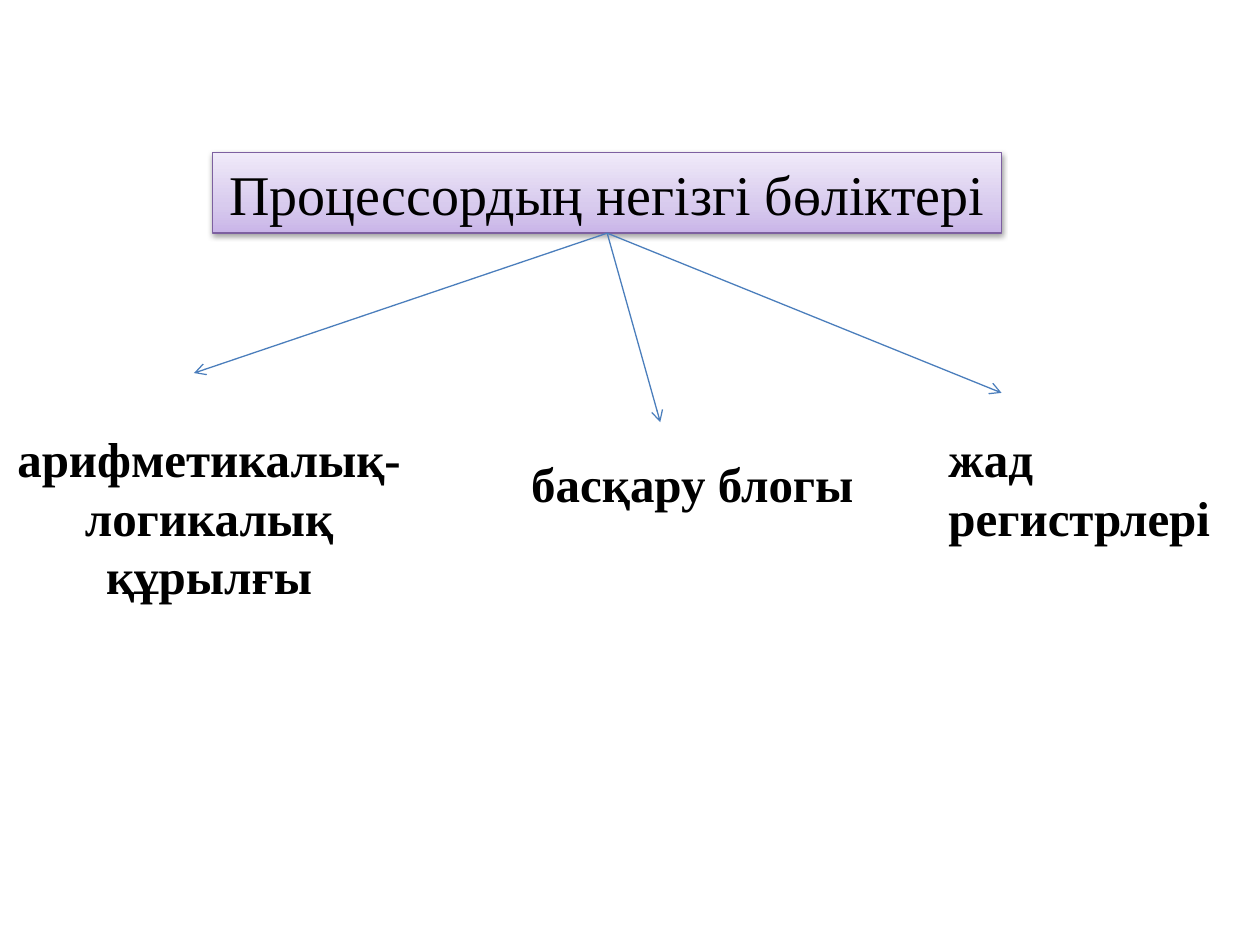
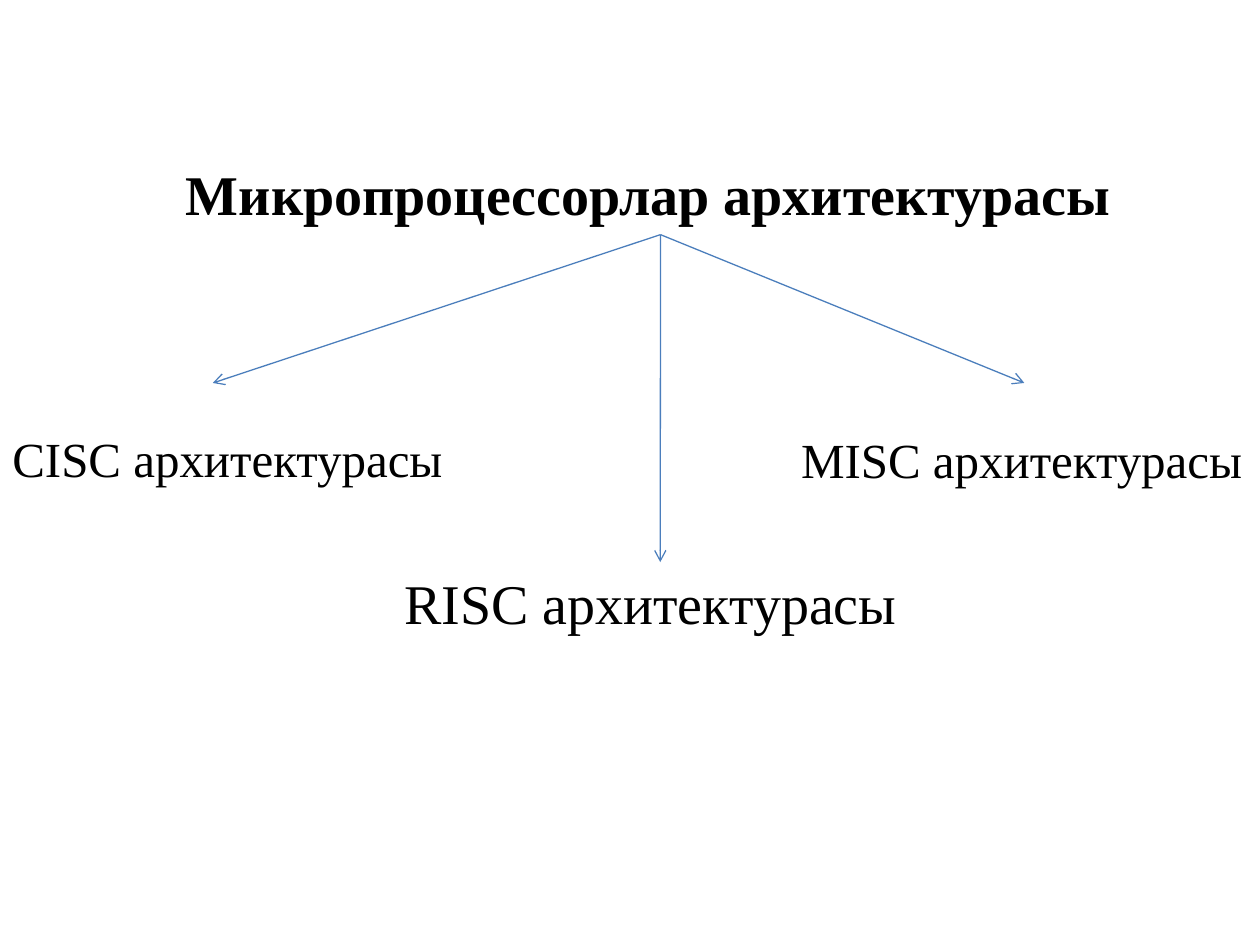
from copy import deepcopy
from dataclasses import dataclass

from lxml import etree
from pptx import Presentation, util as u
from pptx.dml.color import RGBColor
from pptx.enum import shapes, text
from pptx.oxml.ns import qn

BLACK = RGBColor(0x00, 0x00, 0x00)
ARROW_BLUE = RGBColor(0x4B, 0x7E, 0xBC)
BORDER_PURPLE = RGBColor(0x7D, 0x60, 0xA0)
PURPLE_STOPS = (
    (0, RGBColor(0xC9, 0xB5, 0xE8)),
    (0.35, RGBColor(0xD8, 0xCB, 0xEE)),
    (1, RGBColor(0xF0, 0xEA, 0xF9)),
)
FONT = "Times New Roman"
LINE_WIDTH = u.Pt(0.75)
BOTTOM = 2
LEFT, CENTER = text.PP_ALIGN.LEFT, text.PP_ALIGN.CENTER


@dataclass(frozen=True)
class Label:
    """A piece of text; the box is left, top, width, height in cm."""
    words: str
    box: tuple[float, float, float, float]
    size: int = 28
    bold: bool = False
    wrap: bool = False
    align: text.PP_ALIGN = LEFT
    framed: bool = False


@dataclass(frozen=True)
class Branch:
    """A label and the point, in cm, where the arrow to it ends."""
    label: Label
    tip: tuple[float, float]


@dataclass(frozen=True)
class Tree:
    title: Label
    branches: tuple[Branch, ...]


TREES = (
    Tree(
        Label("Процессордың негізгі бөліктері", (4.29, 3.07, 15.9, 1.63),
              size=32, wrap=True, align=CENTER, framed=True),
        (
            Branch(Label("арифметикалық-логикалық құрылғы", (-0.08, 8.51, 8.59, 3.84),
                         bold=True, wrap=True, align=CENTER), (3.91, 7.52)),
            Branch(Label("басқару блогы", (10.46, 9.02, 7.09, 1.45), bold=True),
                   (13.31, 8.51)),
            Branch(Label("жад регистрлері", (18.87, 8.51, 6.5, 2.64),
                         bold=True, wrap=True), (20.19, 7.92)),
        ),
    ),
    Tree(
        Label("Микропроцессорлар архитектурасы", (3.5, 3.1, 19.63, 1.63),
              size=32, bold=True),
        (
            Branch(Label("CISC архитектурасы", (0, 8.51, 9.27, 1.45)), (4.29, 7.72)),
            Branch(Label("RISC архитектурасы", (7.9, 11.33, 10.54, 1.63), size=32),
                   (13.31, 11.33)),
            Branch(Label("MISC архитектурасы", (15.9, 8.53, 9.5, 1.45)), (20.65, 7.72)),
        ),
    ),
)


def add_frame(sp) -> None:
    """Give the shape a purple gradient, a thin border and a soft shadow."""
    sp.fill.gradient()
    sp.fill.gradient_angle = 90
    stop_list = sp._element.spPr.find(qn("a:gradFill")).find(qn("a:gsLst"))
    stop_list.append(deepcopy(stop_list[-1]))
    for stop, (position, color) in zip(sp.fill.gradient_stops, PURPLE_STOPS):
        stop.position = position
        stop.color.rgb = color
    sp.line.color.rgb = BORDER_PURPLE
    sp.line.width = LINE_WIDTH

    sp.shadow.inherit = False
    effects = sp._element.spPr.find(qn("a:effectLst"))
    shadow = etree.SubElement(effects, qn("a:outerShdw"), blurRad="40000",
                              dist="20000", dir="5400000", rotWithShape="0")
    color = etree.SubElement(shadow, qn("a:srgbClr"), val=str(BLACK))
    etree.SubElement(color, qn("a:alpha"), val="38000")


def add_label(s, label: Label):
    box = [u.Cm(v) for v in label.box]
    if label.framed:
        sp = s.shapes.add_shape(shapes.MSO_SHAPE.RECTANGLE, *box)
        add_frame(sp)
    else:
        sp = s.shapes.add_textbox(*box)
    tf = sp.text_frame
    tf.word_wrap = label.wrap
    tf.auto_size = text.MSO_AUTO_SIZE.SHAPE_TO_FIT_TEXT
    p = tf.paragraphs[0]
    p.alignment = label.align
    r = p.add_run()
    r.text = label.words
    formats = {"name": FONT, "size": u.Pt(label.size), "bold": label.bold}
    for name, value in formats.items():
        setattr(r.font, name, value)
    r.font.color.rgb = BLACK
    return sp


def add_arrow(s, title, tip: tuple[float, float]) -> None:
    """Draw an arrow from the middle of the title's bottom side to the tip."""
    x, y = (u.Cm(v) for v in tip)
    arrow = s.shapes.add_connector(shapes.MSO_CONNECTOR.STRAIGHT, 0, 0, x, y)
    arrow.begin_connect(title, BOTTOM)
    arrow.line.color.rgb = ARROW_BLUE
    arrow.line.width = LINE_WIDTH
    etree.SubElement(arrow.line._get_or_add_ln(), qn("a:tailEnd"), type="arrow")
    etree.SubElement(arrow._element.spPr, qn("a:effectLst"))


def add_tree(prs, tree: Tree) -> None:
    s = prs.slides.add_slide(prs.slide_layouts[6])
    title = add_label(s, tree.title)
    for branch in tree.branches:
        add_arrow(s, title, branch.tip)
        add_label(s, branch.label)


def main() -> None:
    prs = Presentation()
    prs.slide_width, prs.slide_height = u.Cm(25.4), u.Cm(19.05)
    for tree in TREES:
        add_tree(prs, tree)
    prs.save("out.pptx")


if __name__ == "__main__":
    main()
